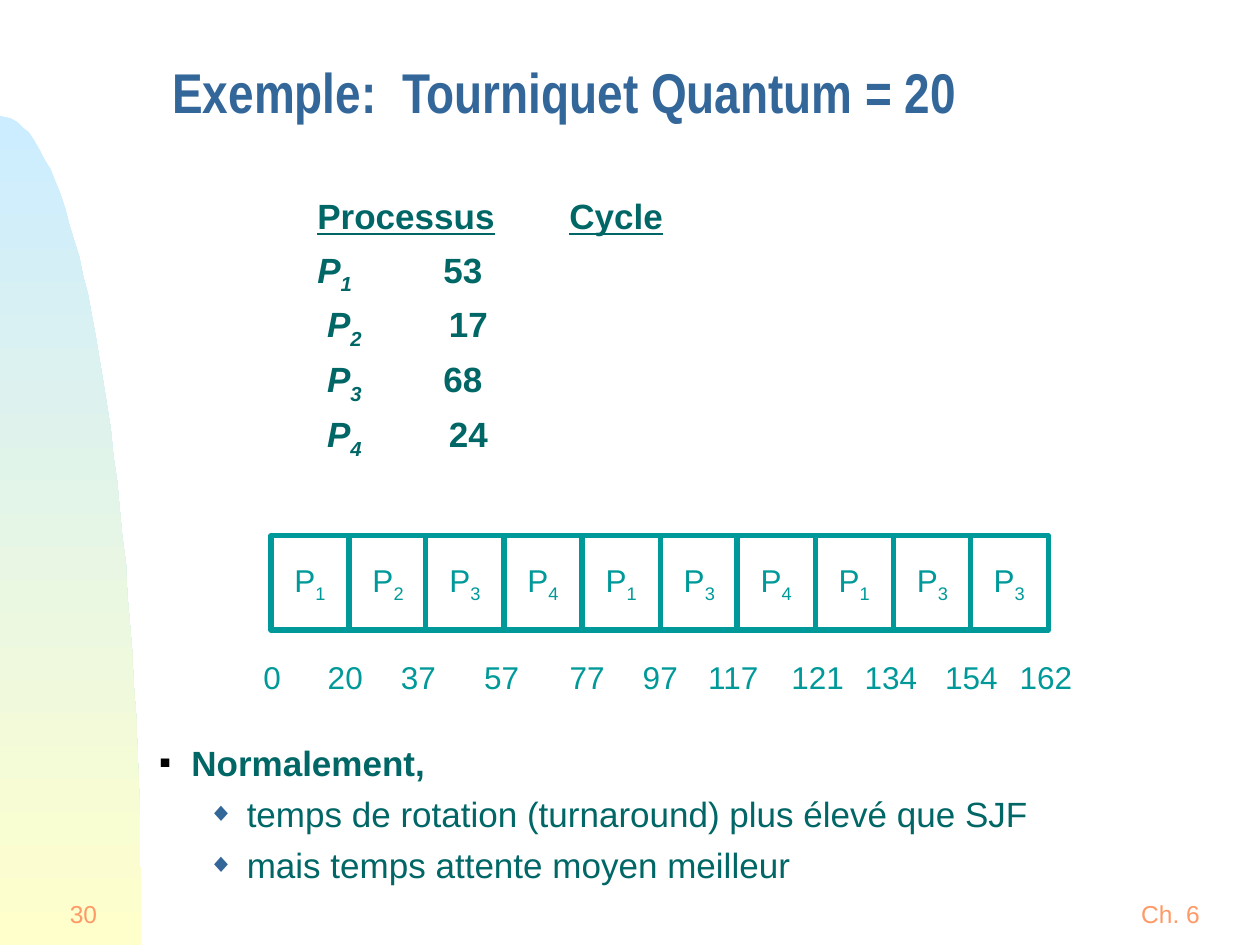
from lxml.etree import SubElement
from pptx import Presentation
from pptx.dml.color import RGBColor
from pptx.enum.shapes import MSO_SHAPE
from pptx.enum.text import MSO_ANCHOR, MSO_AUTO_SIZE, PP_ALIGN
from pptx.oxml.ns import qn
from pptx.util import Emu, Pt

PX = 9144  # EMU per px, 100 px to the inch

SKY = RGBColor(0xCC, 0xEC, 0xFF)
CREAM = RGBColor(0xFF, 0xFF, 0xCC)
WHITE = RGBColor(0xFF, 0xFF, 0xFF)
BLUE = RGBColor(0x33, 0x66, 0x99)
GREEN = RGBColor(0x00, 0x66, 0x66)
TEAL = RGBColor(0x00, 0x99, 0x99)
ORANGE = RGBColor(0xFF, 0x99, 0x66)
BLACK = RGBColor(0x01, 0x00, 0x00)

# Before the name, process number, gap, burst time
PROCESSES = [("", 1, "\t", 53), (" ", 2, "\t ", 17),
             (" ", 3, "\t", 68), (" ", 4, "\t ", 24)]
SCHEDULE = [1, 2, 3, 4, 1, 3, 4, 1, 3, 3]
# Time and the centre of its label
TIMES = [(0, 216), (20, 274), (37, 332), (57, 398), (77, 466), (97, 524),
         (117, 582), (121, 649), (134, 707), (154, 771), (162, 830)]


def px(*lengths):
    return [Emu(length * PX) for length in lengths]


def add_span(para, text, size, color, font="Arial", bold=False, italic=False,
             underline=False, subscript=False):
    span = para.add_run()
    span.text = text
    span.font.name, span.font.size = font, Pt(size)
    span.font.bold, span.font.italic, span.font.underline = bold, italic, underline
    span.font.color.rgb = color
    if subscript:
        span.font._element.set("baseline", "-25000")


def add_box(page, left, top, width, height, anchor=MSO_ANCHOR.MIDDLE, wrap=True):
    box = page.shapes.add_textbox(*px(left, top, width, height))
    box.text_frame.word_wrap = wrap
    box.text_frame.vertical_anchor = anchor
    return box


def add_label(page, text, left, top, width, height, size, color, align):
    box = add_box(page, left, top, width, height, wrap=False)
    para = box.text_frame.paragraphs[0]
    para.alignment = align
    add_span(para, text, size, color)
    return box


def add_curve(page):
    """Gradient area under a Bezier curve at the left edge."""
    start, control_1, control_2, end = (0, 92), (62, 92), (112, 387), (112, 750)
    points = []
    for step in range(1, 41):
        t = step / 40
        u = 1 - t
        points.append(tuple(
            u**3 * a + 3 * u * u * t * b + 3 * u * t * t * c + t**3 * d
            for a, b, c, d in zip(start, control_1, control_2, end)))
    builder = page.shapes.build_freeform(*start, scale=PX)
    builder.add_line_segments(points + [(0, 750)], close=True)
    area = builder.convert_to_shape()
    area.shadow.inherit = False
    area.line.fill.background()
    area.fill.gradient()
    area.fill.gradient_angle = 270
    for stop, color, position in zip(area.fill.gradient_stops, (SKY, CREAM), (0, 1)):
        stop.color.rgb, stop.position = color, position


def add_title(page, text):
    para = add_box(page, 127, 54, 753, 50).text_frame.paragraphs[0]
    para.line_spacing = 0.7
    add_span(para, text, 32, BLUE, font="Arial Narrow", bold=True)


def format_para(para, space, margin=25, indent=-25, bullet=None):
    """Space before in points, hanging indent and an optional bullet."""
    para.space_before = Pt(space)
    props = para._p.get_or_add_pPr()
    props.set("marL", str(margin * PX))
    props.set("indent", str(indent * PX))
    props.set("defTabSz", str(100 * PX))
    if bullet:
        char, color, percent = bullet
        SubElement(SubElement(props, qn("a:buClr")), qn("a:srgbClr"), val=str(color))
        SubElement(props, qn("a:buSzPct"), val=str(percent * 1000))
        SubElement(props, qn("a:buFont"), typeface="Arial")
        SubElement(props, qn("a:buChar"), char=char)
    else:
        SubElement(props, qn("a:buNone"))


def add_body(page):
    frame = add_box(page, 117, 133, 769, 475, MSO_ANCHOR.TOP).text_frame

    # Process list
    para = frame.paragraphs[0]
    format_para(para, 4)
    add_span(para, "\t\t", 32, GREEN, bold=True)
    add_span(para, "Processus", 20, GREEN, bold=True, underline=True)
    add_span(para, "\t", 20, GREEN, bold=True)
    add_span(para, "Cycle", 20, GREEN, bold=True, underline=True)
    for lead, number, gap, burst in PROCESSES:
        para = frame.add_paragraph()
        format_para(para, 4)
        add_span(para, f"\t\t{lead}P", 20, GREEN, bold=True, italic=True)
        add_span(para, f"{number}{gap}", 20, GREEN, bold=True, italic=True, subscript=True)
        add_span(para, str(burst), 20, GREEN, bold=True)

    # Remarks
    para = frame.add_paragraph()
    format_para(para, 161, bullet=("■", BLACK, 50))
    add_span(para, "Normalement,", 20, GREEN, bold=True)
    for remark in ("temps de rotation (turnaround) plus élevé que SJF",
                   "mais temps attente moyen meilleur"):
        para = frame.add_paragraph()
        para.level = 1
        format_para(para, 5, 69, -31, ("◆", BLUE, 75))
        add_span(para, remark, 20, GREEN)


def add_cell(group, number, left):
    cell = group.shapes.add_shape(MSO_SHAPE.RECTANGLE, *px(left, 425, 62, 75))
    cell.shadow.inherit = False
    cell.fill.solid()
    cell.fill.fore_color.rgb = WHITE
    cell.line.color.rgb, cell.line.width = TEAL, Pt(3)
    cell.text_frame.word_wrap = False
    cell.text_frame.vertical_anchor = MSO_ANCHOR.MIDDLE
    para = cell.text_frame.paragraphs[0]
    para.alignment = PP_ALIGN.CENTER
    add_span(para, "P", 18, TEAL)
    add_span(para, str(number), 18, TEAL, subscript=True)


def add_gantt(page):
    group = page.shapes.add_group_shape()
    for index, number in enumerate(SCHEDULE):
        add_cell(group, number, round(215 + 61.7 * index))
    for time, center in TIMES:
        width = 20 + 14 * len(str(time))
        label = add_label(page, str(time), center - width // 2, 517, width, 40,
                          18, TEAL, PP_ALIGN.CENTER)
        label.text_frame.auto_size = MSO_AUTO_SIZE.SHAPE_TO_FIT_TEXT


def main():
    deck = Presentation()
    deck.slide_width, deck.slide_height = px(1000, 750)
    page = deck.slides.add_slide(deck.slide_layouts[6])
    add_curve(page)
    add_label(page, "Ch. 6", 883, 700, 92, 50, 14, ORANGE, PP_ALIGN.CENTER)
    add_label(page, "30", 17, 700, 70, 50, 14, ORANGE, PP_ALIGN.RIGHT)
    add_title(page, "Exemple:  Tourniquet Quantum = 20")
    add_body(page)
    add_gantt(page)
    deck.save("out.pptx")


if __name__ == "__main__":
    main()
